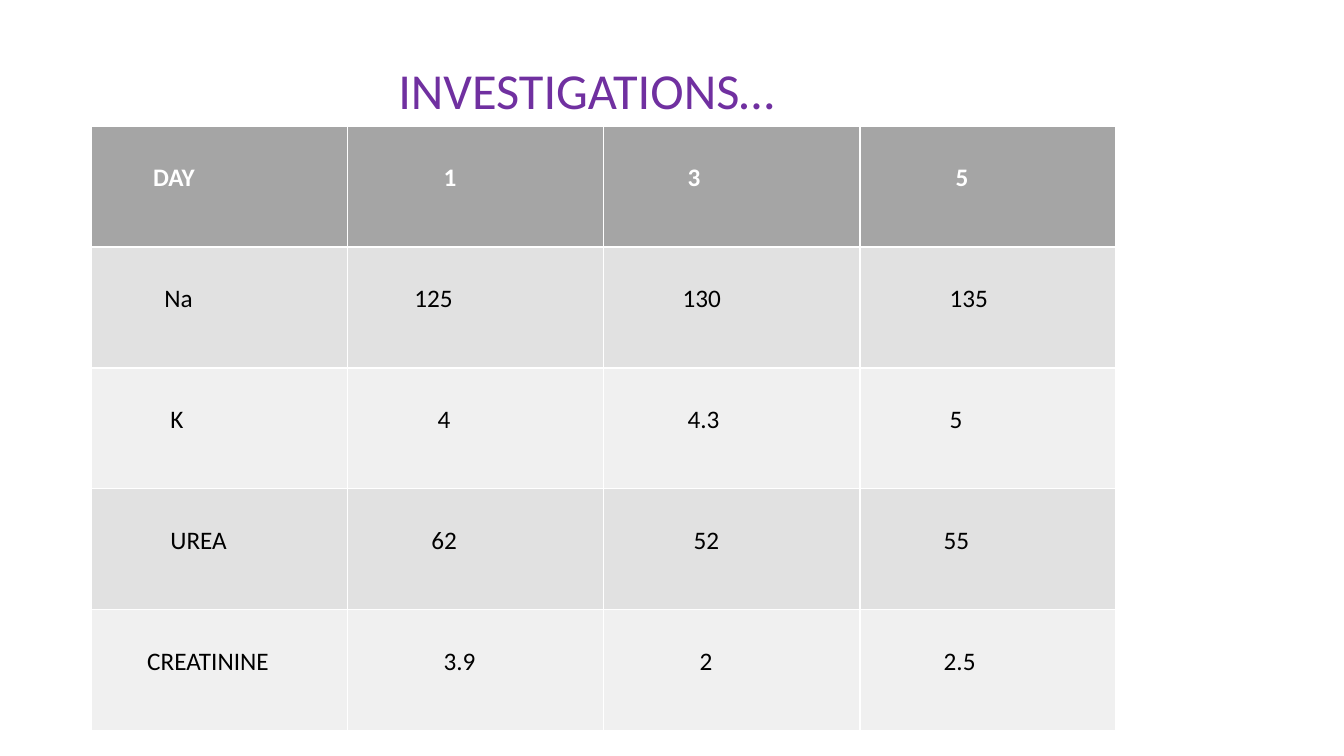
from pptx import Presentation
from pptx.dml.color import RGBColor
from pptx.enum import text
from pptx.util import Inches, Pt

TITLE = "INVESTIGATIONS…"
# Each cell: wording and indent of the text from the cell's left edge, in inches
ROWS = [
    [("DAY", 0.61), ("1", 0.95), ("3", 0.83), ("5", 0.95)],
    [("Na", 0.72), ("125", 0.66), ("130", 0.78), ("135", 0.89)],
    [("K", 0.78), ("4", 0.89), ("4.3", 0.83), ("5", 0.89)],
    [("UREA", 0.78), ("62", 0.83), ("52", 0.89), ("55", 0.83)],
    [("CREATININE", 0.55), ("3.9", 0.95), ("2", 0.95), ("2.5", 0.83)],
]
HEADER_FILL = "A5A5A5"
BAND_FILLS = ["F0F0F0", "E1E1E1"]
COLUMN_WIDTH, ROW_HEIGHT = 2.54, 1.2


def color(value):
    return RGBColor.from_string(value)


def format_text(para, size, hue, bold=False):
    para.alignment = text.PP_ALIGN.LEFT
    for span in para.runs:
        span.font.name = "Calibri"
        span.font.size = Pt(size)
        span.font.bold = bold
        span.font.color.rgb = color(hue)


deck = Presentation()
deck.slide_width, deck.slide_height = Inches(13.33), Inches(7.5)
page = deck.slides.add_slide(deck.slide_layouts[5])

# Title
title = page.shapes.title
title.left, title.top = Inches(3.28), Inches(0.54)
title.width, title.height = Inches(4.51), Inches(0.71)
frame = title.text_frame
frame.text = TITLE
frame.auto_size = text.MSO_AUTO_SIZE.NONE
frame.vertical_anchor = text.MSO_ANCHOR.TOP
frame.margin_left, frame.margin_right = Inches(0.67), 0
format_text(frame.paragraphs[0], 36, "7030A0")

# Table: the default style supplies the white grid and thick header rule
columns = len(ROWS[0])
table = page.shapes.add_table(
    len(ROWS), columns, Inches(0.91), Inches(1.25),
    Inches(COLUMN_WIDTH * columns), Inches(ROW_HEIGHT * len(ROWS))).table
for column in table.columns:
    column.width = Inches(COLUMN_WIDTH)

for r, values in enumerate(ROWS):
    table.rows[r].height = Inches(ROW_HEIGHT)
    is_header = r == 0
    for c, (wording, indent) in enumerate(values):
        cell = table.cell(r, c)
        cell.text = wording
        cell.margin_left, cell.margin_top = Inches(indent), Inches(0.36)
        cell.vertical_anchor = text.MSO_ANCHOR.TOP
        cell.fill.solid()
        cell.fill.fore_color.rgb = color(HEADER_FILL if is_header else BAND_FILLS[r % 2])
        format_text(cell.text_frame.paragraphs[0], 18,
                    "FFFFFF" if is_header else "000000", is_header)

deck.save("out.pptx")
